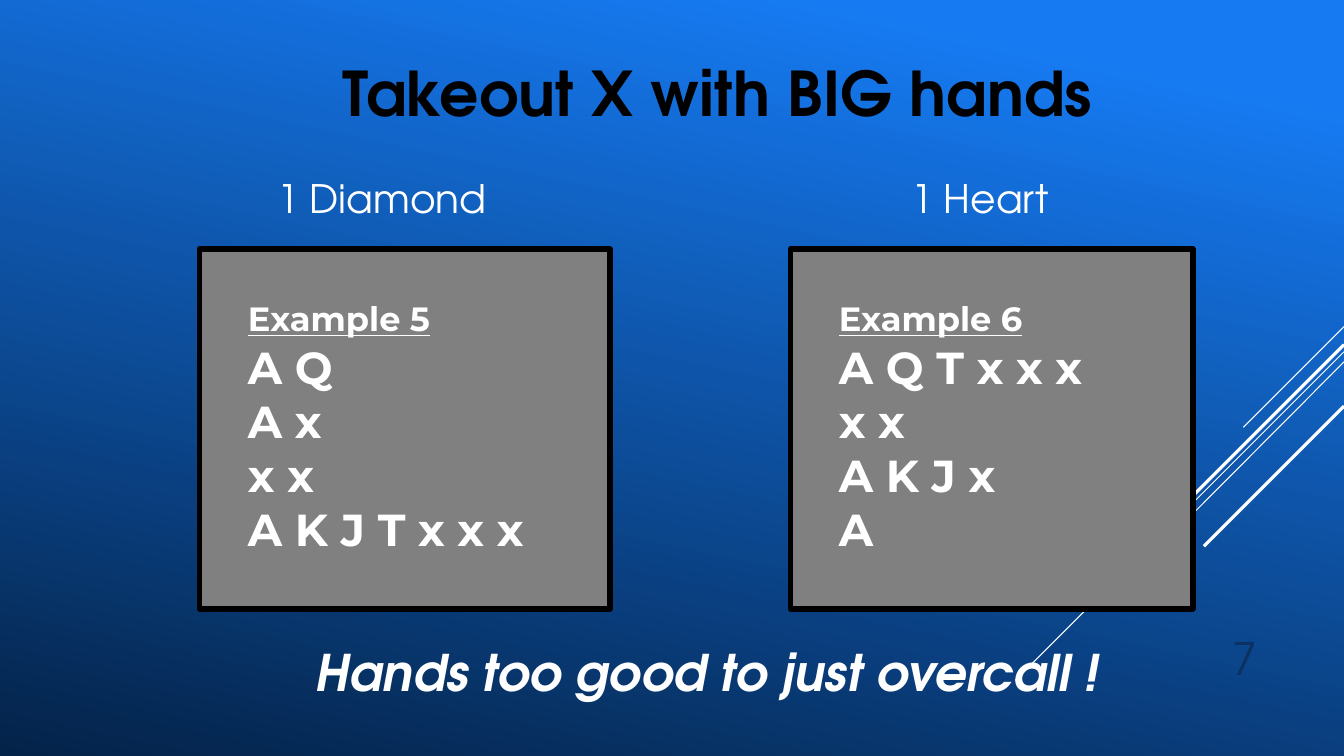
from lxml import etree
from pptx import Presentation
from pptx import util as u
from pptx.dml.color import RGBColor
from pptx.enum import shapes, text
from pptx.oxml.ns import qn

PX = 9144
COLORS = {
    "sky": "167BF3",
    "navy": "042349",
    "number": "0A3161",
    "card": "808080",
    "black": "000000",
    "white": "FFFFFF",
}
DISPLAY = "TeX Gyre Adventor"
BODY = "Montserrat"

RAYS = [
    (324, 1233, 424, 0.75),
    (349, 1007, 675, 0.75),
    (359, 1126, 567, 0.75),
    (342, 1142, 533, 2.25),
    (403, 1194, 542, 2.25),
]
HANDS = [
    (198, 407, "Example 5", ["A Q", "A x", "x x", "A K J T x x x"]),
    (784, 399, "Example 6", ["A Q T x x x", "x x", "A K J x", "A"]),
]


def px(*values):
    return [u.Emu(v * PX) for v in values]


def rgb(name):
    return RGBColor.from_string(COLORS[name])


def paint_background(slide):
    fill = slide.background.fill
    fill.gradient()
    fill.gradient_angle = 258
    for stop, position, color in zip(fill.gradient_stops, (0.1, 1), ("sky", "navy")):
        stop.position = position
        stop.color.rgb = rgb(color)


def add_ray(slide, y1, x2, y2, weight):
    line = slide.shapes.add_connector(
        shapes.MSO_CONNECTOR.STRAIGHT, *px(1333, y1, x2, y2)
    )
    line.line.color.rgb = rgb("white")
    line.line.width = u.Pt(weight)
    etree.SubElement(line._element.spPr, qn("a:effectLst"))


def add_run(p, words, size, font, color="white", bold=False, italic=False, underline=False):
    r = p.add_run()
    r.text = words
    f = r.font
    f.size, f.name = u.Pt(size), font
    f.bold, f.italic, f.underline = bold, italic, underline
    f.color.rgb = rgb(color)


def add_label(slide, box, words, size, align=text.PP_ALIGN.LEFT, **style):
    tf = slide.shapes.add_textbox(*px(*box)).text_frame
    tf.word_wrap = True
    p = tf.paragraphs[0]
    p.alignment = align
    add_run(p, words, size, DISPLAY, **style)


def add_hand(slide, left, width, heading, suits):
    sp = slide.shapes.add_shape(
        shapes.MSO_SHAPE.RECTANGLE, *px(left, 247, width, 357)
    )
    sp.shadow.inherit = False
    sp.fill.solid()
    sp.fill.fore_color.rgb = rgb("card")
    sp.line.color.rgb = rgb("black")
    sp.line.width = u.Pt(4)
    tf = sp.text_frame
    tf.word_wrap = True
    tf.vertical_anchor = text.MSO_ANCHOR.TOP
    tf.margin_left, tf.margin_top = px(48, 49)
    p = tf.paragraphs[0]
    p.alignment = text.PP_ALIGN.LEFT
    p.space_after = u.Pt(1)
    add_run(p, heading, 24, BODY, bold=True, underline=True)
    for cards in suits:
        p = tf.add_paragraph()
        p.alignment = text.PP_ALIGN.LEFT
        add_run(p, cards, 32, BODY, bold=True)


def main():
    prs = Presentation()
    prs.slide_width, prs.slide_height = px(1333, 750)
    slide = prs.slides.add_slide(prs.slide_layouts[6])
    paint_background(slide)
    for ray in RAYS:
        add_ray(slide, *ray)
    add_label(slide, (1140, 621, 117, 64), "7", 32, text.PP_ALIGN.RIGHT, color="number")
    for hand in HANDS:
        add_hand(slide, *hand)
    add_label(slide, (265, 168, 291, 57), "1 Diamond", 28)
    add_label(slide, (894, 168, 198, 57), "1 Heart", 28)
    add_label(
        slide, (330, 50, 844, 84), "Takeout X with BIG hands", 44, color="black", bold=True
    )
    add_label(
        slide, (303, 631, 880, 71), "Hands too good to just overcall !", 36,
        bold=True, italic=True,
    )
    prs.save("out.pptx")


if __name__ == "__main__":
    main()
